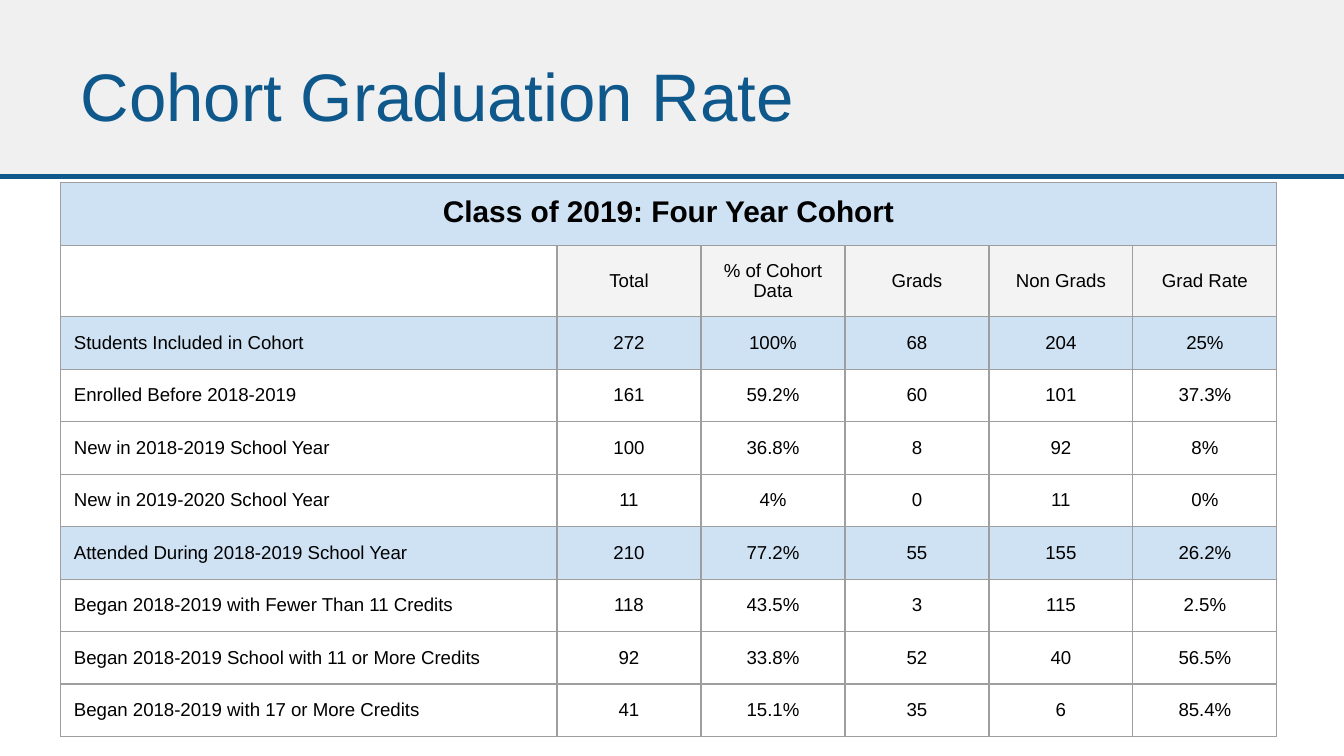
from dataclasses import dataclass

from lxml import etree
from pptx import Presentation
from pptx import util as u
from pptx.dml import color
from pptx.enum import shapes, text
from pptx.oxml import ns


@dataclass(frozen=True)
class Theme:
    """Colours, type sizes and font of the deck."""
    font: str = "Arial"
    accent: str = "0F588B"
    band: str = "F0F0F0"
    highlight: str = "CFE2F3"
    heading: str = "F3F3F3"
    border: str = "9E9E9E"
    ink: str = "000000"
    title_size: float = 36
    caption_size: float = 16
    cell_size: float = 10


THEME = Theme()
INSET = u.Pt(7.2)
CAPTION = "Class of 2019: Four Year Cohort"
HEADINGS = ("", "Total", "% of Cohort Data", "Grads", "Non Grads", "Grad Rate")
RECORDS = (
    ("Students Included in Cohort", "272", "100%", "68", "204", "25%"),
    ("Enrolled Before 2018-2019", "161", "59.2%", "60", "101", "37.3%"),
    ("New in 2018-2019 School Year", "100", "36.8%", "8", "92", "8%"),
    ("New in 2019-2020 School Year", "11", "4%", "0", "11", "0%"),
    ("Attended During 2018-2019 School Year", "210", "77.2%", "55", "155", "26.2%"),
    ("Began 2018-2019 with Fewer Than 11 Credits", "118", "43.5%", "3", "115", "2.5%"),
    ("Began 2018-2019 School with 11 or More Credits", "92", "33.8%", "52", "40", "56.5%"),
    ("Began 2018-2019 with 17 or More Credits", "41", "15.1%", "35", "6", "85.4%"),
)
HIGHLIGHTED = (0, 4)


def rgb(value):
    """Turn a hex string into a colour."""
    return color.RGBColor.from_string(value)


def write(frame, words, size=THEME.cell_size, ink=THEME.ink, bold=False,
          align=text.PP_ALIGN.CENTER):
    """Put formatted words into the first paragraph of a text frame."""
    para = frame.paragraphs[0]
    para.alignment = align
    span = para.add_run()
    span.text = words
    span.font.name = THEME.font
    span.font.size = u.Pt(size)
    span.font.bold = bold
    span.font.color.rgb = rgb(ink)


def set_insets(holder):
    """Give a cell or text frame equal margins on all sides."""
    holder.margin_left = holder.margin_right = INSET
    holder.margin_top = holder.margin_bottom = INSET
    holder.vertical_anchor = text.MSO_ANCHOR.MIDDLE


def add_header_band(page, left, top, width, height):
    """Draw the grey header band with its rule along the bottom."""
    band = page.shapes.add_shape(shapes.MSO_SHAPE.RECTANGLE, u.Pt(left), u.Pt(top),
                                 u.Pt(width), u.Pt(height))
    band.shadow.inherit = False
    band.fill.solid()
    band.fill.fore_color.rgb = rgb(THEME.band)
    band.line.fill.background()
    bottom = u.Pt(top + height)
    rule = page.shapes.add_connector(shapes.MSO_CONNECTOR.STRAIGHT, u.Pt(left), bottom,
                                     u.Pt(left + width), bottom)
    rule.line.color.rgb = rgb(THEME.accent)
    rule.line.width = u.Pt(3)
    etree.SubElement(rule.element.spPr, ns.qn("a:effectLst"))


def place_title(page, words, left, top, width, height):
    """Move the title placeholder in front of the band and fill it."""
    title = page.shapes.title
    title.element.getparent().append(title.element)
    title.left, title.top = u.Pt(left), u.Pt(top)
    title.width, title.height = u.Pt(width), u.Pt(height)
    frame = title.text_frame
    frame.word_wrap = True
    frame.auto_size = text.MSO_AUTO_SIZE.NONE
    set_insets(frame)
    write(frame, words, size=THEME.title_size, ink=THEME.accent,
          align=text.PP_ALIGN.LEFT)


def style_cell(cell, fill=None):
    """Set the margins, borders and fill of a table cell."""
    set_insets(cell)
    props = cell._tc.get_or_add_tcPr()
    for side in ("a:lnL", "a:lnR", "a:lnT", "a:lnB"):
        line = etree.SubElement(props, ns.qn(side), w=str(u.Pt(0.75)))
        paint = etree.SubElement(line, ns.qn("a:solidFill"))
        etree.SubElement(paint, ns.qn("a:srgbClr"), val=THEME.border)
    if fill:
        cell.fill.solid()
        cell.fill.fore_color.rgb = rgb(fill)
    else:
        cell.fill.background()


def fill_for(row, column):
    """Choose the fill of a cell from its place in the table."""
    if row == 0 or row - 2 in HIGHLIGHTED:
        return THEME.highlight
    return THEME.heading if row == 1 and column else None


def add_cohort_table(page, left, top, width, height):
    """Build the cohort table with a merged caption row."""
    rows = ((CAPTION,) + ("",) * (len(HEADINGS) - 1), HEADINGS) + RECORDS
    frame = page.shapes.add_table(len(rows), len(HEADINGS), u.Pt(left), u.Pt(top),
                                  u.Pt(width), u.Pt(height))
    table = frame.table
    table.first_row = table.horz_banding = False
    label_width, caption_height, heading_height = 266, 33.75, 38.2
    value_width = (width - label_width) / (len(HEADINGS) - 1)
    record_height = (height - caption_height - heading_height) / len(RECORDS)
    for index, column in enumerate(table.columns):
        column.width = u.Pt(value_width if index else label_width)
    for index, row in enumerate(table.rows):
        row.height = u.Pt((caption_height, heading_height)[index] if index < 2
                          else record_height)
    for r, values in enumerate(rows):
        for c, words in enumerate(values):
            cell = table.cell(r, c)
            style_cell(cell, fill_for(r, c))
            if words:
                write(cell.text_frame, words, bold=r == 0,
                      size=THEME.cell_size if r else THEME.caption_size,
                      align=text.PP_ALIGN.LEFT if r and c == 0 else text.PP_ALIGN.CENTER)
    caption = table.cell(0, 0)
    caption.vertical_anchor = text.MSO_ANCHOR.TOP
    caption.merge(table.cell(0, len(HEADINGS) - 1))


def main():
    """Build the deck and save it."""
    deck = Presentation()
    deck.slide_width, deck.slide_height = u.Pt(720), u.Pt(405)
    page = deck.slides.add_slide(deck.slide_layouts[5])
    add_header_band(page, 0, 0, 720, 94.5)
    place_title(page, "Cohort Graduation Rate", 36, 16.8, 552, 67.5)
    add_cohort_table(page, 32.4, 97.75, 651.75, 297)
    deck.save("out.pptx")


if __name__ == "__main__":
    main()
